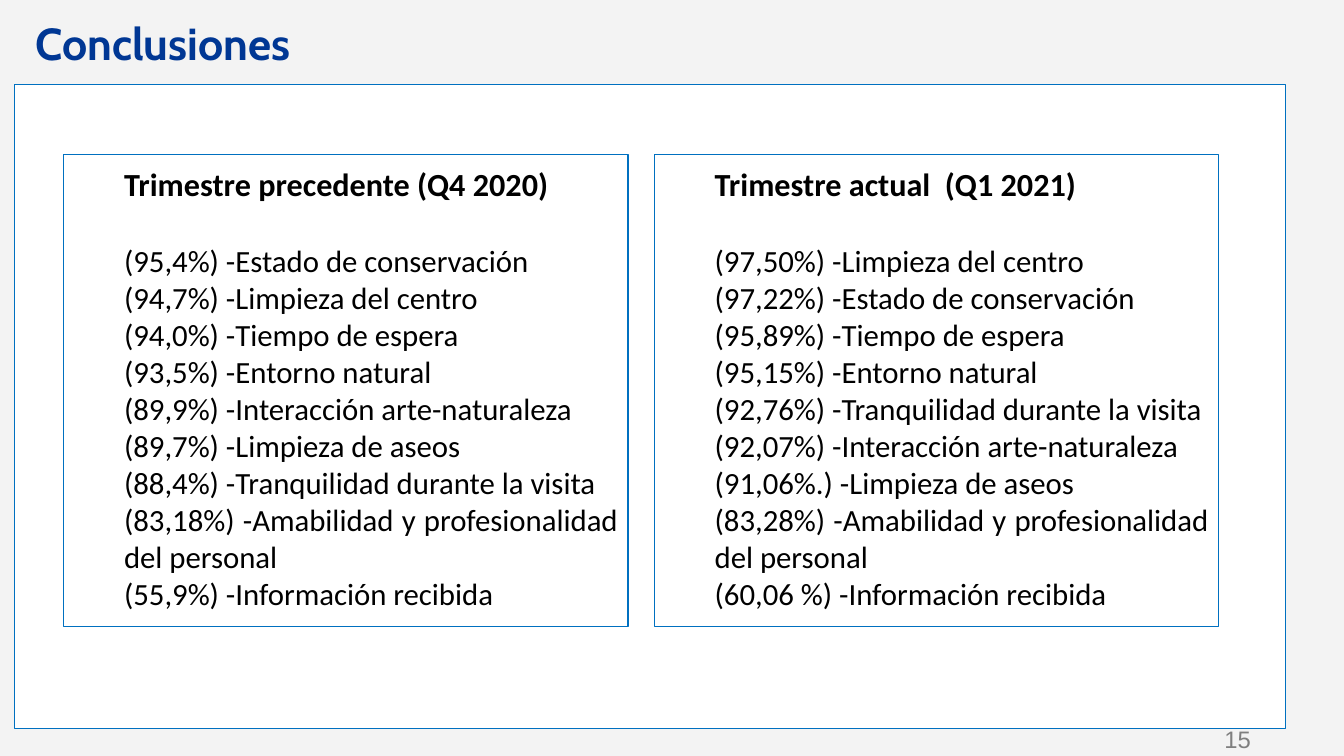
from dataclasses import dataclass

from lxml import etree
from pptx import Presentation
from pptx.dml.color import RGBColor
from pptx.enum.shapes import MSO_SHAPE
from pptx.enum.text import MSO_ANCHOR, MSO_AUTO_SIZE, PP_ALIGN
from pptx.oxml.ns import qn
from pptx.util import Pt

RECTANGLE = MSO_SHAPE.RECTANGLE
TOP, MIDDLE = MSO_ANCHOR.TOP, MSO_ANCHOR.MIDDLE
LEFT, RIGHT, JUSTIFY = PP_ALIGN.LEFT, PP_ALIGN.RIGHT, PP_ALIGN.JUSTIFY
NO_AUTOFIT = MSO_AUTO_SIZE.NONE
TWO_CONTENT_LAYOUT = 3


@dataclass(frozen=True)
class TextStyle:
    font: str
    size: float
    color: str
    bold: bool = False


@dataclass(frozen=True)
class Theme:
    background: str = "F3F3F3"
    surface: str = "FFFFFF"
    outline: str = "0070C0"
    outline_width: float = 0.75
    title: TextStyle = TextStyle("Cabin", 32, "003794", True)
    heading: TextStyle = TextStyle("Calibri", 23, "000000", True)
    item: TextStyle = TextStyle("Calibri", 22, "000000")
    number: TextStyle = TextStyle("Arial", 17, "7F7F7F")


@dataclass(frozen=True)
class Area:
    left: float
    top: float
    width: float
    height: float


@dataclass(frozen=True)
class Quarter:
    heading: str
    ratings: tuple[tuple[str, str], ...]


THEME = Theme()
TITLE_AREA = Area(25.2, 0, 907.9, 60.5)
FRAME_AREA = Area(10.1, 60.5, 907.9, 460)
NUMBER_AREA = Area(678.2, 513.4, 223.9, 28.8)
PANEL_AREA = Area(45.4, 110.2, 403.2, 337)
PANEL_STEP = 421.9
PANEL_INSET = 7.2
LIST_INDENT = 36
HEADING_GAP = 28

QUARTERS = (
    Quarter("Trimestre precedente (Q4 2020)", (
        ("95,4%", "Estado de conservación"),
        ("94,7%", "Limpieza del centro"),
        ("94,0%", "Tiempo de espera"),
        ("93,5%", "Entorno natural"),
        ("89,9%", "Interacción arte-naturaleza"),
        ("89,7%", "Limpieza de aseos"),
        ("88,4%", "Tranquilidad durante la visita"),
        ("83,18%", "Amabilidad y profesionalidad del personal"),
        ("55,9%", "Información recibida"),
    )),
    Quarter("Trimestre actual  (Q1 2021)", (
        ("97,50%", "Limpieza del centro"),
        ("97,22%", "Estado de conservación"),
        ("95,89%", "Tiempo de espera"),
        ("95,15%", "Entorno natural"),
        ("92,76%", "Tranquilidad durante la visita"),
        ("92,07%", "Interacción arte-naturaleza"),
        ("91,06%.", "Limpieza de aseos"),
        ("83,28%", "Amabilidad y profesionalidad del personal"),
        ("60,06 %", "Información recibida"),
    )),
)


def place(box, area: Area) -> None:
    box.left, box.top = Pt(area.left), Pt(area.top)
    box.width, box.height = Pt(area.width), Pt(area.height)


def paint(box) -> None:
    box.fill.solid()
    box.fill.fore_color.rgb = RGBColor.from_string(THEME.surface)
    box.line.color.rgb = RGBColor.from_string(THEME.outline)
    box.line.width = Pt(THEME.outline_width)


def set_frame(box, anchor, inset_x: float, inset_y: float) -> None:
    frame = box.text_frame
    frame.word_wrap = True
    frame.auto_size = NO_AUTOFIT
    frame.vertical_anchor = anchor
    frame.margin_left = frame.margin_right = Pt(inset_x)
    frame.margin_top = frame.margin_bottom = Pt(inset_y)


def write(para, text: str, style: TextStyle, alignment) -> None:
    para.alignment = alignment
    span = para.add_run()
    span.text = text
    span.font.name = style.font
    span.font.size = Pt(style.size)
    span.font.bold = style.bold
    span.font.color.rgb = RGBColor.from_string(style.color)


def write_list_line(para, text: str, style: TextStyle, space_before: float) -> None:
    properties = para._p.get_or_add_pPr()
    properties.set("marL", str(Pt(LIST_INDENT)))
    properties.set("indent", "0")
    etree.SubElement(properties, qn("a:buNone"))
    para.space_before = Pt(space_before)
    write(para, text, style, JUSTIFY)


def fill_panel(box, quarter: Quarter, area: Area) -> None:
    place(box, area)
    paint(box)
    set_frame(box, TOP, PANEL_INSET, PANEL_INSET)
    frame = box.text_frame
    write_list_line(frame.paragraphs[0], quarter.heading, THEME.heading, 0)
    for index, (score, topic) in enumerate(quarter.ratings):
        gap = HEADING_GAP if index == 0 else 0
        write_list_line(frame.add_paragraph(), f"({score}) -{topic}", THEME.item, gap)


def main() -> None:
    deck = Presentation()
    deck.slide_width, deck.slide_height = Pt(960), Pt(540)
    page = deck.slides.add_slide(deck.slide_layouts[TWO_CONTENT_LAYOUT])
    page.background.fill.solid()
    page.background.fill.fore_color.rgb = RGBColor.from_string(THEME.background)
    title, *panels = page.placeholders

    # Title
    place(title, TITLE_AREA)
    set_frame(title, MIDDLE, 0, 0)
    write(title.text_frame.paragraphs[0], "Conclusiones", THEME.title, LEFT)

    # White frame, stacked behind the panels
    backdrop = page.shapes.add_shape(RECTANGLE, 0, 0, 0, 0)
    place(backdrop, FRAME_AREA)
    paint(backdrop)
    backdrop.shadow.inherit = False
    title._element.addnext(backdrop._element)

    # Quarter panels
    for column, (box, quarter) in enumerate(zip(panels, QUARTERS)):
        left = PANEL_AREA.left + column * PANEL_STEP
        area = Area(left, PANEL_AREA.top, PANEL_AREA.width, PANEL_AREA.height)
        fill_panel(box, quarter, area)

    # Page number
    number = page.shapes.add_textbox(0, 0, 0, 0)
    place(number, NUMBER_AREA)
    set_frame(number, MIDDLE, 8.6, 4.3)
    write(number.text_frame.paragraphs[0], "15", THEME.number, RIGHT)

    deck.save("out.pptx")


if __name__ == "__main__":
    main()
